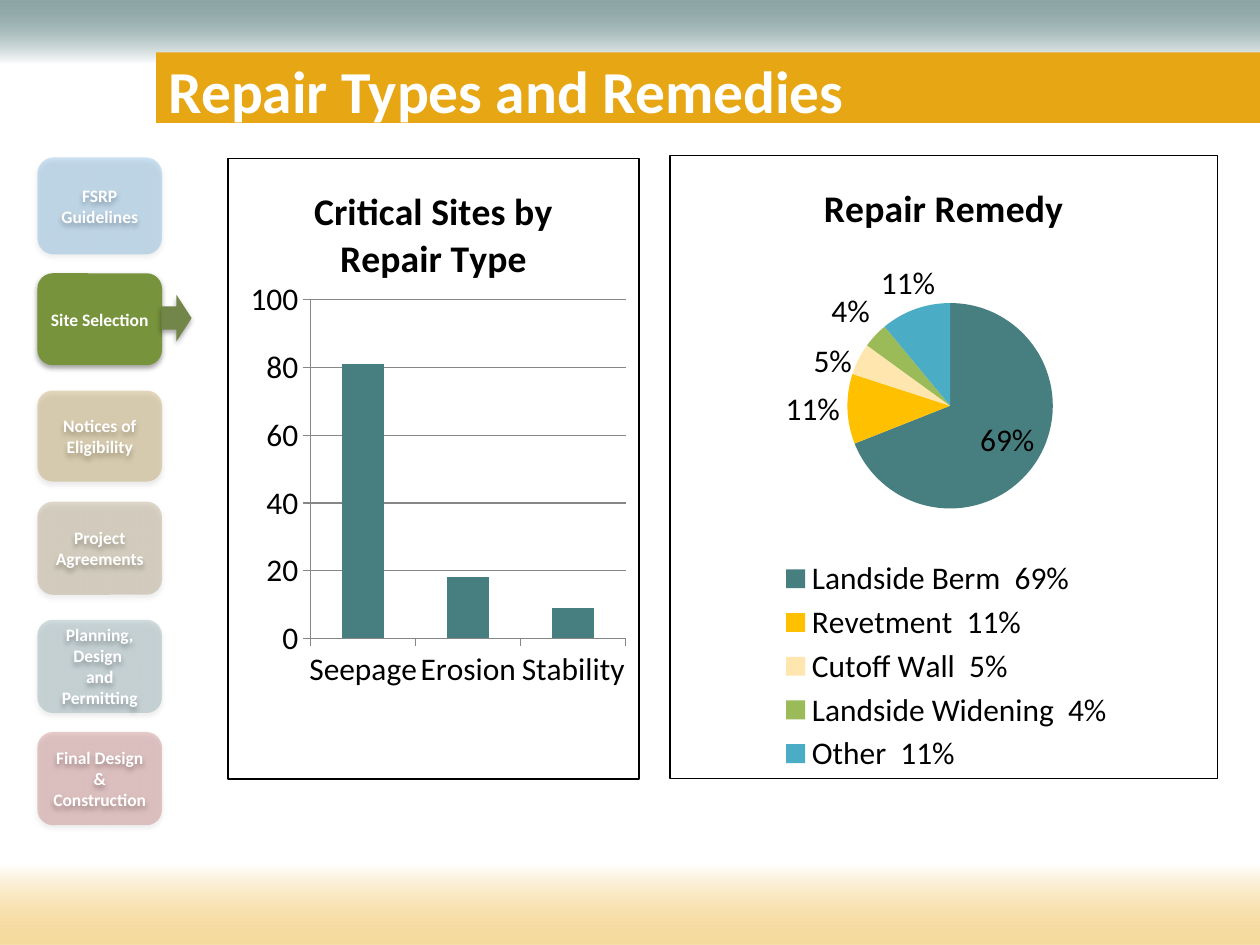
from lxml import etree
from pptx import Presentation
from pptx.chart.data import CategoryChartData
from pptx.dml.color import RGBColor
from pptx.enum.chart import XL_CHART_TYPE, XL_LABEL_POSITION, XL_LEGEND_POSITION, XL_TICK_MARK
from pptx.enum.shapes import MSO_SHAPE
from pptx.enum.text import MSO_ANCHOR, PP_ALIGN
from pptx.oxml import parse_xml
from pptx.oxml.ns import nsdecls, qn
from pptx.util import Pt

WHITE = RGBColor(0xFF, 0xFF, 0xFF)
BLACK = RGBColor(0, 0, 0)
GRAY = RGBColor(0x86, 0x86, 0x86)
ORANGE = RGBColor(0xE7, 0xA6, 0x14)
GOLD = RGBColor(0xEE, 0xB8, 0x40)
DARK_TEAL = RGBColor(0x21, 0x53, 0x52)
TEAL = RGBColor(0x47, 0x7F, 0x80)
YELLOW = RGBColor(0xFF, 0xC0, 0x00)
CREAM = RGBColor(0xFF, 0xE6, 0xAF)
LIME = RGBColor(0x9B, 0xBB, 0x59)
SKY = RGBColor(0x4B, 0xAC, 0xC6)
BLUE = RGBColor(0x00, 0x70, 0xC0)
GREEN = RGBColor(0x77, 0x93, 0x3C)
BROWN = RGBColor(0x9B, 0x6B, 0x00)
DARK_BROWN = RGBColor(0x67, 0x47, 0x00)
PETROL = RGBColor(0x21, 0x59, 0x68)
RED = RGBColor(0x90, 0x00, 0x00)
OLIVE = RGBColor(0x73, 0x86, 0x4A)
FONT = "Calibri"


def add_block(kind, box, color, opacity=100, fade_angle=None, shadow=False):
    """Add a borderless shape; fade_angle makes a gradient from color to white."""
    shape = slide.shapes.add_shape(kind, *[Pt(length) for length in box])
    shape.shadow.inherit = False
    shape.line.fill.background()
    if fade_angle is None:
        shape.fill.solid()
        shape.fill.fore_color.rgb = color
    else:
        shape.fill.gradient()
        shape.fill.gradient_angle = fade_angle
        for stop, stop_color, position in zip(shape.fill.gradient_stops, (color, WHITE), (0, 0.52)):
            stop.color.rgb = stop_color
            stop.position = position
    properties = shape._element.spPr
    if opacity < 100:
        first_color = next(properties.iter(qn("a:srgbClr")))
        etree.SubElement(first_color, qn("a:alpha"), val=str(opacity * 1000))
    if shadow:
        properties.find(qn("a:effectLst")).append(parse_xml(
            f'<a:outerShdw {nsdecls("a")} blurRad="{Pt(3.1)}" dist="{Pt(1.8)}" dir="5400000" '
            'rotWithShape="0"><a:srgbClr val="000000"><a:alpha val="35000"/></a:srgbClr></a:outerShdw>'))
    return shape


def set_layout(element, index, box, target=""):
    """Place a chart part at fractions of the chart area."""
    for layout in element.findall(qn("c:layout")):
        element.remove(layout)
    modes = '<c:xMode val="edge"/><c:yMode val="edge"/>'
    sizes = "".join(f'<c:{name} val="{value}"/>' for name, value in zip("xywh", box))
    element.insert(index, parse_xml(
        f'<c:layout {nsdecls("c")}><c:manualLayout>{target}{modes}{sizes}</c:manualLayout></c:layout>'))


presentation = Presentation()
presentation.slide_width = Pt(720)
presentation.slide_height = Pt(540)
slide = presentation.slides.add_slide(presentation.slide_layouts[6])

# Background bands and title
add_block(MSO_SHAPE.RECTANGLE, (0, 0, 720, 70.5), DARK_TEAL, 51, fade_angle=270)
add_block(MSO_SHAPE.RECTANGLE, (89.3, 30, 630.7, 40.3), ORANGE)
add_block(MSO_SHAPE.RECTANGLE, (0, 451.5, 720, 88.5), WHITE, 51)
add_block(MSO_SHAPE.RECTANGLE, (0, 451.5, 720, 88.5), GOLD, 51, fade_angle=90)

title = slide.shapes.add_textbox(Pt(89.3), Pt(30), Pt(630.7), Pt(42))
title.text_frame.word_wrap = True
title.text_frame.vertical_anchor = MSO_ANCHOR.MIDDLE
run = title.text_frame.paragraphs[0].add_run()
run.text = "Repair Types and Remedies"
run.font.name = FONT
run.font.size = Pt(34)
run.font.bold = True
run.font.color.rgb = WHITE

# Charts
remedies = CategoryChartData(number_format="General")
remedies.categories = ["Landside Berm  69%", "Revetment  11%", "Cutoff Wall  5%",
                       "Landside Widening  4%", "Other  11%"]
remedies.add_series("Repair Remedy", (69, 11, 5, 4, 11))
repair_types = CategoryChartData(number_format="General")
repair_types.categories = ["Seepage", "Erosion", "Stability"]
repair_types.add_series("Series 1", (81, 18, 9))

charts = []
for kind, box, data, heading, plot_box in [
    (XL_CHART_TYPE.PIE, (382.5, 88.3, 313.7, 357), remedies, "Repair Remedy",
     (0.324, 0.237, 0.375, 0.33)),
    (XL_CHART_TYPE.COLUMN_CLUSTERED, (130, 90, 235.5, 355.5), repair_types,
     "Critical Sites by Repair Type", (0.201, 0.228, 0.767, 0.546)),
]:
    chart = slide.shapes.add_chart(kind, *[Pt(length) for length in box], data).chart
    chart.font.name = FONT
    chart.font.size = Pt(18)
    chart.font.color.rgb = BLACK
    chart.has_legend = False
    chart.has_title = True
    chart.chart_title.include_in_layout = False
    run = chart.chart_title.text_frame.paragraphs[0].add_run()
    run.text = heading
    run.font.name = FONT
    run.font.size = Pt(21.6)
    run.font.bold = True
    run.font.color.rgb = BLACK
    chart_space = chart._chartSpace
    set_layout(chart_space.chart.plotArea, 0, plot_box, '<c:layoutTarget val="inner"/>')
    chart_space.chart.addnext(parse_xml(
        f'<c:spPr {nsdecls("c", "a")}><a:noFill/><a:ln w="{Pt(0.75)}"><a:solidFill>'
        '<a:srgbClr val="000000"/></a:solidFill></a:ln></c:spPr>'))
    charts.append(chart)
pie_chart, column_chart = charts

pie_chart.has_legend = True
pie_chart.legend.position = XL_LEGEND_POSITION.BOTTOM
pie_chart.legend.include_in_layout = False
set_layout(pie_chart.legend._element, 1, (0.2, 0.64, 0.61, 0.36))
pie = pie_chart.plots[0]
pie.vary_by_categories = True
for index, color in enumerate((TEAL, YELLOW, CREAM, LIME, SKY)):
    fill = pie.series[0].points[index].format.fill
    fill.solid()
    fill.fore_color.rgb = color
labels = pie.series[0].data_labels
labels.show_value = False
labels.show_percentage = True
labels.number_format = "0%"
labels.number_format_is_linked = False
labels.position = XL_LABEL_POSITION.BEST_FIT

columns = column_chart.plots[0]
columns.vary_by_categories = False
columns.gap_width = 150
columns.series[0].format.fill.solid()
columns.series[0].format.fill.fore_color.rgb = TEAL
value_axis = column_chart.value_axis
value_axis.minimum_scale = 0
value_axis.maximum_scale = 100
value_axis.major_unit = 20
value_axis.has_major_gridlines = True
value_axis.major_gridlines.format.line.color.rgb = GRAY
for axis in (value_axis, column_chart.category_axis):
    axis.major_tick_mark = XL_TICK_MARK.OUTSIDE
    axis.format.line.color.rgb = GRAY

# Process steps
for top, height, color, opacity, lines in [
    (90, 55.4, BLUE, 20, ["FSRP Guidelines"]),
    (156.2, 52.5, GREEN, 100, ["Site Selection"]),
    (223.2, 52, BROWN, 25, ["Notices of Eligibility"]),
    (286.6, 53.3, DARK_BROWN, 20, ["Project Agreements"]),
    (354.2, 53.3, PETROL, 20, ["Planning, Design ", "and Permitting"]),
    (418.3, 53.3, RED, 20, ["Final Design & Construction"]),
]:
    step = add_block(MSO_SHAPE.ROUNDED_RECTANGLE, (21.4, top, 71.2, height), color, opacity, shadow=True)
    frame = step.text_frame
    frame.word_wrap = True
    frame.vertical_anchor = MSO_ANCHOR.MIDDLE
    frame.margin_left = frame.margin_right = frame.margin_top = frame.margin_bottom = Pt(3.6)
    for index, line in enumerate(lines):
        paragraph = frame.add_paragraph() if index else frame.paragraphs[0]
        paragraph.alignment = PP_ALIGN.CENTER
        run = paragraph.add_run()
        run.text = line
        run.font.name = FONT
        run.font.size = Pt(10)
        run.font.bold = True
        run.font.color.rgb = WHITE

add_block(MSO_SHAPE.RIGHT_ARROW, (92.2, 168.5, 17.3, 26.6), OLIVE, shadow=True)

presentation.save("out.pptx")
